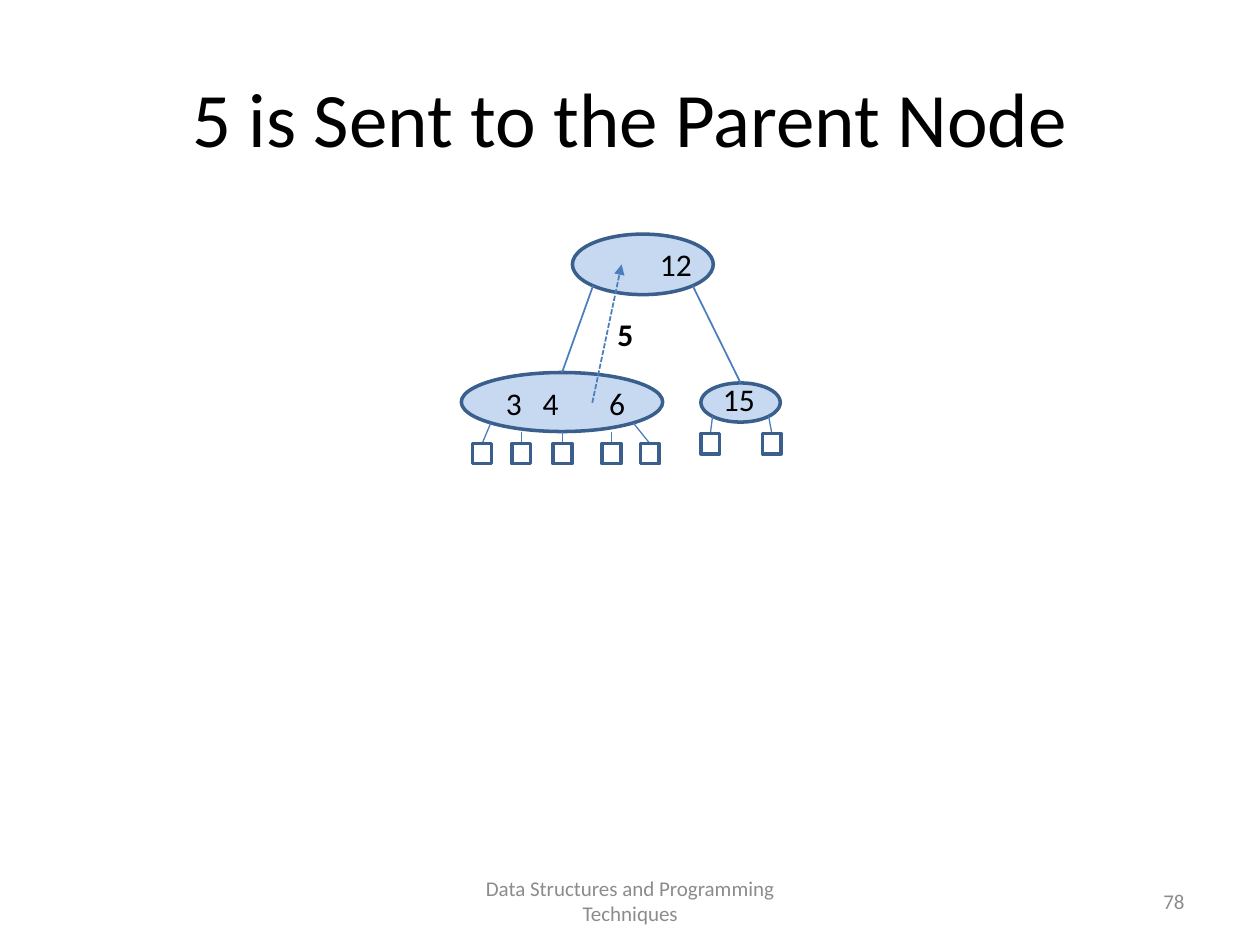
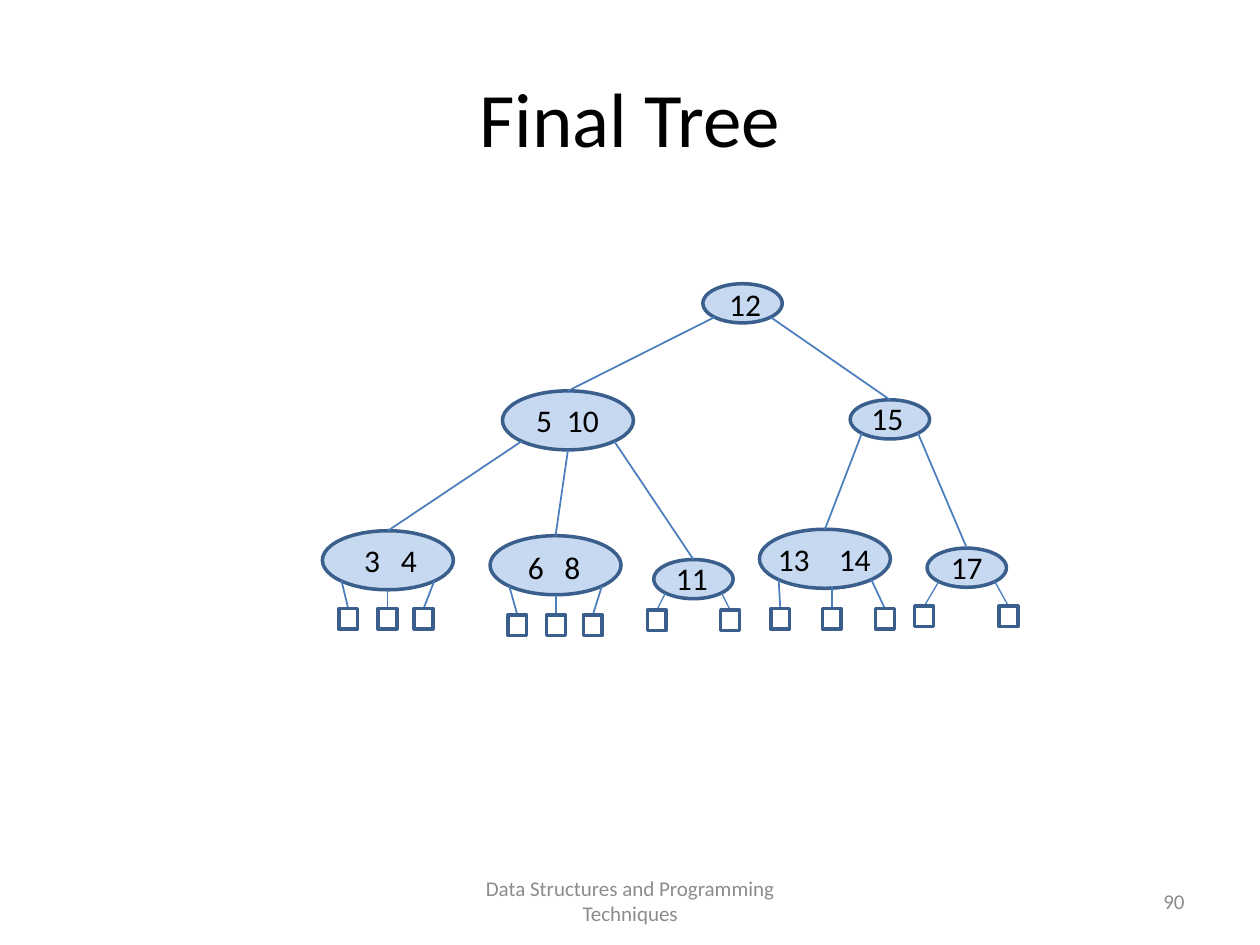
from dataclasses import dataclass

from lxml import etree
from pptx import Presentation
from pptx.dml.color import RGBColor
from pptx.enum.dml import MSO_LINE
from pptx.enum.shapes import MSO_CONNECTOR, MSO_SHAPE
from pptx.enum.text import MSO_ANCHOR, MSO_AUTO_SIZE, PP_ALIGN
from pptx.oxml.ns import qn
from pptx.util import Cm, Pt

ELLIPSE, RECTANGLE = MSO_SHAPE.OVAL, MSO_SHAPE.RECTANGLE
STRAIGHT = MSO_CONNECTOR.STRAIGHT
SHORT_DASH = MSO_LINE.SQUARE_DOT
LEFT, CENTER, RIGHT = PP_ALIGN.LEFT, PP_ALIGN.CENTER, PP_ALIGN.RIGHT
MIDDLE, TOP = MSO_ANCHOR.MIDDLE, MSO_ANCHOR.TOP
GROW = MSO_AUTO_SIZE.SHAPE_TO_FIT_TEXT
TITLE_ONLY = 5


@dataclass(frozen=True)
class Theme:
    font: str = "Calibri"
    text: RGBColor = RGBColor(0x00, 0x00, 0x00)
    muted: RGBColor = RGBColor(0x8C, 0x8C, 0x8C)
    node: RGBColor = RGBColor(0xC6, 0xD9, 0xF1)
    outline: RGBColor = RGBColor(0x3A, 0x5F, 0x8C)
    edge: RGBColor = RGBColor(0x4B, 0x7E, 0xBC)
    title_size: float = 44
    key_size: float = 18
    footer_size: float = 12
    outline_width: float = 2
    edge_width: float = 1
    thin_width: float = 0.75


THEME = Theme()

# Lengths in centimetres
SMALL, PAIR, WIDE, ROOT = (1.6, 0.79), (2.64, 1.19), (4.06, 1.19), (2.84, 1.22)
LEAF = (0.38, 0.41)
LABEL_HEIGHT = 1.02
DIAGONAL = 0.5 ** 0.5 / 2  # reach of an ellipse's 45 degree point


@dataclass(frozen=True)
class Node:
    """Tree node; label and leaves are placed relative to its corner."""
    keys: str
    corner: tuple
    size: tuple
    label: tuple                # left, top, width
    indent: float = 0           # start of the first key when there are several
    tabs: tuple = ()
    leaves: tuple = ()
    leaf_top: float = 0
    leaf_line: float = THEME.thin_width
    children: tuple = ()

    def point(self, across, down):
        return (self.corner[0] + across * self.size[0],
                self.corner[1] + down * self.size[1])


# Text and lines
def format_text(text_frame, size, color, align, bold=False):
    for paragraph in text_frame.paragraphs:
        paragraph.alignment = align
        for run in paragraph.runs:
            run.font.name = THEME.font
            run.font.size = Pt(size)
            run.font.color.rgb = color
            run.font.bold = bold


def add_text(slide, box, text, size, color, align, anchor=TOP, bold=False):
    shape = slide.shapes.add_textbox(*map(Cm, box))
    text_frame = shape.text_frame
    text_frame.word_wrap = True
    text_frame.vertical_anchor = anchor
    text_frame.text = text
    format_text(text_frame, size, color, align, bold)
    return text_frame


def add_key_text(slide, box, keys, indent=0, tabs=(), bold=False):
    text_frame = add_text(slide, box, keys, THEME.key_size, THEME.text,
                          LEFT if tabs else CENTER, bold=bold)
    text_frame.auto_size = GROW
    if tabs:
        text_frame.margin_left, text_frame.margin_right = Cm(indent), 0
        properties = text_frame.paragraphs[0]._p.get_or_add_pPr()
        tab_list = etree.SubElement(properties, qn("a:tabLst"))
        for position in tabs:
            etree.SubElement(tab_list, qn("a:tab"), pos=str(Cm(position)), algn="l")


def add_edge(slide, origin, start, end, width, dashed_arrow=False):
    left, top = origin
    line = slide.shapes.add_connector(
        STRAIGHT, Cm(left + start[0]), Cm(top + start[1]),
        Cm(left + end[0]), Cm(top + end[1]))
    line.line.color.rgb = THEME.edge
    line.line.width = Pt(width)
    if dashed_arrow:
        line.line.dash_style = SHORT_DASH
        etree.SubElement(line.line._get_or_add_ln(), qn("a:tailEnd"), type="triangle")
    etree.SubElement(line._element.spPr, qn("a:effectLst"))


# Tree parts
def add_outlined(slide, kind, origin, corner, size, fill=None):
    shape = slide.shapes.add_shape(
        kind, Cm(origin[0] + corner[0]), Cm(origin[1] + corner[1]), *map(Cm, size))
    shape.shadow.inherit = False
    if fill is None:
        shape.fill.background()
    else:
        shape.fill.solid()
        shape.fill.fore_color.rgb = fill
    shape.line.color.rgb = THEME.outline
    shape.line.width = Pt(THEME.outline_width)


def edge_start(node, index, count, middle):
    """Outer edges leave at 45 degrees, inner ones at the bottom."""
    if index == 0:
        return node.point(0.5 - DIAGONAL, 0.5 + DIAGONAL)
    if index == count - 1:
        return node.point(0.5 + DIAGONAL, 0.5 + DIAGONAL)
    return middle, node.point(0, 1)[1]


def add_tree(slide, origin, node):
    add_outlined(slide, ELLIPSE, origin, node.corner, node.size, THEME.node)
    left, top = node.corner

    for index, offset in enumerate(node.leaves):
        corner = (left + offset, top + node.leaf_top)
        center = corner[0] + LEAF[0] / 2
        start = edge_start(node, index, len(node.leaves), center)
        add_edge(slide, origin, start, (center, corner[1]), node.leaf_line)
        add_outlined(slide, RECTANGLE, origin, corner, LEAF)

    for index, child in enumerate(node.children):
        start = edge_start(node, index, len(node.children), node.point(0.5, 1)[0])
        add_tree(slide, origin, child)
        add_edge(slide, origin, start, child.point(0.5, 0), THEME.edge_width)

    label_left, label_top, label_width = node.label
    box = (origin[0] + left + label_left, origin[1] + top + label_top,
           label_width, LABEL_HEIGHT)
    add_key_text(slide, box, node.keys, node.indent, node.tabs)


# Slides
def add_titled_slide(presentation, title, number):
    slide = presentation.slides.add_slide(presentation.slide_layouts[TITLE_ONLY])
    placeholder = slide.shapes.title
    placeholder.left, placeholder.top = Cm(1.27), Cm(0.76)
    placeholder.width, placeholder.height = Cm(22.86), Cm(3.18)
    placeholder.text_frame.text = title
    placeholder.text_frame.vertical_anchor = MIDDLE
    format_text(placeholder.text_frame, THEME.title_size, THEME.text, CENTER)

    footers = (
        ((8.68, 17.65, 8.05, 1.02), "Data Structures and Programming Techniques", CENTER),
        ((18.21, 17.65, 5.92, 1.02), number, RIGHT),
    )
    for box, text, align in footers:
        add_text(slide, box, text, THEME.footer_size, THEME.muted, align, MIDDLE)
    return slide


def add_split_slide(presentation):
    slide = add_titled_slide(presentation, "5 is Sent to the Parent Node", "78")
    origin = left, top = (9.3, 4.72)
    full = Node("3\t4\t6", (0, 2.79), WIDE, (0.51, 0.1, 3.2), 0.39, (0.74, 2.08),
                leaves=(0.23, 1.02, 1.85, 2.84, 3.61), leaf_top=1.43)
    right = Node("15", (4.83, 3), SMALL, (0.08, -0.18, 1.37),
                 leaves=(0, 1.24), leaf_top=1.02)
    add_tree(slide, origin, Node("12", (2.24, 0), ROOT, (1.4, 0.1, 1.37),
                                 children=(full, right)))

    # Key moving up to the root
    add_edge(slide, origin, (2.64, 3.4), (3.23, 0.61), THEME.edge_width,
             dashed_arrow=True)
    add_key_text(slide, (left + 2.62, top + 1.5, 1.37, LABEL_HEIGHT), "5", bold=True)


def add_final_slide(presentation):
    slide = add_titled_slide(presentation, "Final Tree", "90")
    thick = THEME.edge_width
    left = Node("5\t10", (3.63, 2.16), PAIR, (0.43, 0.08, 1.8), 0.25, (0.62,), children=(
        Node("3\t4", (0, 4.98), PAIR, (0.15, 0.08, 2.46), 0.69, (0.74,),
             (0.33, 1.12, 1.85), 1.57, thick),
        Node("6\t8", (3.38, 5.08), PAIR, (0.23, 0.13, 2.21), 0.53, (0.74,),
             (0.36, 1.14, 1.88), 1.6, thick),
        Node("11", (6.68, 5.56), SMALL, (0.15, -0.13, 1.24),
             leaves=(-0.13, 1.35), leaf_top=1.02),
    ))
    right = Node("15", (10.64, 2.34), SMALL, (0.13, -0.15, 1.24), children=(
        Node("13\t14", (8.81, 4.95), PAIR, (0.08, 0.1, 2.44), 0.29, (1.23,),
             (0.23, 1.27, 2.34), 1.6, thick),
        Node("17", (12.19, 5.33), SMALL, (0.18, -0.13, 1.24),
             leaves=(-0.25, 1.45), leaf_top=1.17),
    ))
    add_tree(slide, (6.5, 5.72), Node("12", (7.67, 0), SMALL, (0.23, -0.1, 1.24),
                                      children=(left, right)))


def main():
    presentation = Presentation()
    presentation.slide_width, presentation.slide_height = Cm(25.4), Cm(19.05)
    add_split_slide(presentation)
    add_final_slide(presentation)
    presentation.save("out.pptx")


if __name__ == "__main__":
    main()
